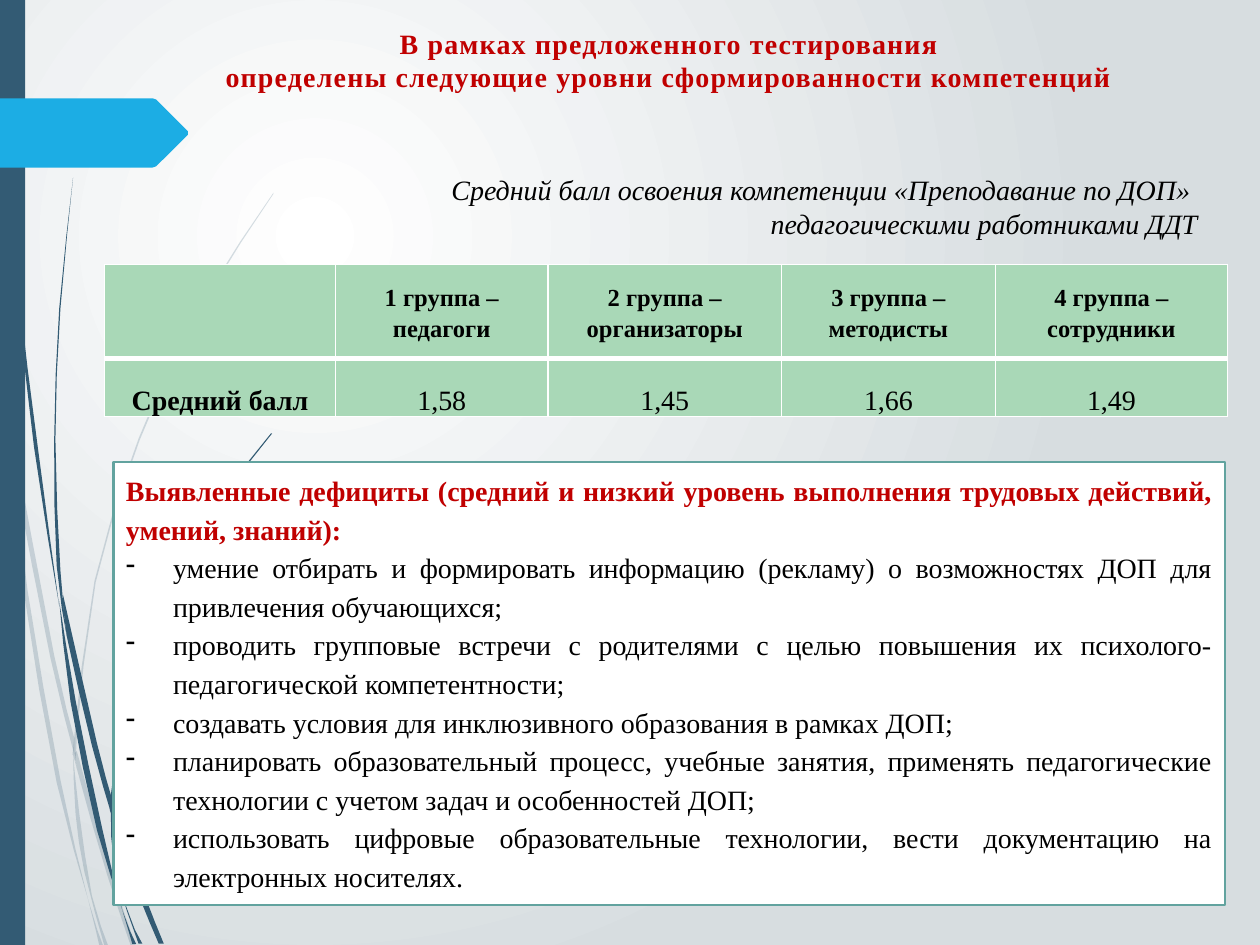
import dataclasses
import typing

import lxml.etree
import pptx
import pptx.dml.color
import pptx.enum.shapes
import pptx.enum.text
import pptx.oxml.ns
import pptx.util

Cm = pptx.util.Cm
Align = pptx.enum.text.PP_ALIGN
Anchor = pptx.enum.text.MSO_ANCHOR
qn = pptx.oxml.ns.qn


@dataclasses.dataclass(frozen=True)
class Theme:
    font: str = "Times New Roman"
    body_size: float = 16
    header_size: float = 14
    slate: str = "335B74"
    arrow: str = "1CADE4"
    heading: str = "C00000"
    text: str = "000000"
    cell: str = "A9D8B7"
    white: str = "FFFFFF"
    frame: str = "62A39F"
    background_edge: str = "D7DDE0"


THEME = Theme()
GRID_CM = 0.0254


class TextStyle(typing.NamedTuple):
    color: str = THEME.text
    size: float = THEME.body_size
    bold: bool = False
    italic: bool = False
    align: Align = Align.CENTER
    line_spacing: float = 1.15
    tracking: int = 0
    bullet: bool = False


class Wisp(typing.NamedTuple):
    first_edge: list
    second_edge: list
    alpha: int = 100000


PALE = 20000
WISPS = [
    Wisp([(0, 299), (8, 350)], [(0, 282), (8, 350)], PALE),
    Wisp([(10, 345), (12, 376), (40, 522), (59, 599)], [(10, 345), (43, 520), (59, 586)], PALE),
    Wisp([(61, 596), (61, 610), (85, 694), (104, 751)], [(61, 596), (88, 692), (108, 751)], PALE),
    Wisp([(8, 350), (19, 470), (45, 621), (70, 714), (79, 751)],
         [(8, 350), (22, 469), (48, 619), (70, 714), (82, 751)], PALE),
    Wisp([(58, 599), (60, 646), (67, 692), (83, 751)], [(58, 599), (63, 646), (73, 711), (86, 751)], PALE),
    Wisp([(58, 599), (59, 584), (75, 461), (110, 348), (158, 244), (217, 153)],
         [(61, 610), (61, 584), (76, 462), (111, 349), (159, 245), (217, 154)], PALE),
    Wisp([(2, 0), (5, 110), (14, 233), (27, 355), (47, 481)],
         [(3, 0), (6, 109), (15, 232), (30, 355), (47, 481)]),
    Wisp([(50, 472), (53, 505), (73, 592), (88, 645)], [(50, 472), (77, 590), (88, 631)]),
    Wisp([(91, 641), (91, 656), (109, 708), (126, 749)], [(91, 641), (113, 706), (130, 749)]),
    Wisp([(47, 477), (56, 557), (77, 659), (97, 722), (105, 749)],
         [(47, 477), (60, 556), (81, 657), (97, 722), (108, 749)]),
    Wisp([(53, 505), (45, 449), (43, 349), (47, 245), (58, 141)],
         [(53, 505), (48, 453), (44, 349), (48, 245), (58, 141)]),
    Wisp([(88, 645), (88, 631), (101, 551), (129, 474), (168, 405), (215, 344)],
         [(91, 656), (91, 633), (103, 552), (131, 476), (169, 406), (216, 344)]),
    Wisp([(88, 645), (91, 691), (110, 749)], [(88, 645), (91, 656), (100, 719), (113, 749)]),
]
ARROW = [(0, 78), (121, 78), (124, 79), (149, 104), (149, 107), (124, 132), (121, 133), (0, 133)]

TITLE = ["В рамках предложенного тестирования",
         "определены следующие уровни сформированности компетенций"]
SUBTITLE = ["Средний балл освоения компетенции «Преподавание по ДОП» ",
            "педагогическими работниками ДДТ"]
COLUMN_WIDTHS = [4.65, 4.29, 4.7, 4.32, 4.67]
SCORES = [["", "1 группа – педагоги", "2 группа – организаторы",
           "3 группа – методисты", "4 группа –сотрудники"],
          ["Средний балл", "1,58", "1,45", "1,66", "1,49"]]
DEFICITS = [
    "Выявленные дефициты (средний и низкий уровень выполнения трудовых действий, умений, знаний):",
    "умение отбирать и формировать информацию (рекламу) о возможностях ДОП для привлечения обучающихся;",
    "проводить групповые встречи с родителями с целью повышения их психолого-педагогической компетентности;",
    "создавать условия для инклюзивного образования в рамках ДОП;",
    "планировать образовательный процесс, учебные занятия, применять педагогические технологии "
    "с учетом задач и особенностей ДОП;",
    "использовать цифровые образовательные технологии, вести документацию на электронных носителях.",
]


def rgb(value: str) -> pptx.dml.color.RGBColor:
    return pptx.dml.color.RGBColor.from_string(value)


def paint(target, color: str) -> None:
    target.fill.solid()
    target.fill.fore_color.rgb = rgb(color)


def smooth(points: list) -> list:
    padded = [points[0], *points, points[-1]]
    curve = [points[0]]
    for a, b, c, d in zip(padded, padded[1:], padded[2:], padded[3:]):
        middle = tuple((9 * (q + r) - p - s) / 16 for p, q, r, s in zip(a, b, c, d))
        curve += [middle, c]
    return curve


def draw_outline(slide, points: list, color: str, alpha: int = 100000) -> None:
    corners = [(Cm(x * GRID_CM), Cm(y * GRID_CM)) for x, y in points]
    builder = slide.shapes.build_freeform(*corners[0])
    builder.add_line_segments(corners[1:], close=True)
    shape = builder.convert_to_shape()
    shape.shadow.inherit = False
    paint(shape, color)
    shape.line.fill.background()
    color_node = shape._element.spPr.find(qn("a:solidFill"))[0]
    lxml.etree.SubElement(color_node, qn("a:alpha"), val=str(alpha))


def draw_rectangle(slide, box: list, color: str, line_color: str):
    shape = slide.shapes.add_shape(pptx.enum.shapes.MSO_SHAPE.RECTANGLE, *map(Cm, box))
    shape.shadow.inherit = False
    paint(shape, color)
    shape.line.color.rgb = rgb(line_color)
    shape.line.width = pptx.util.Pt(1.25)
    return shape


def format_paragraph(paragraph, style: TextStyle) -> None:
    paragraph.alignment = style.align
    paragraph.line_spacing = style.line_spacing
    for run in paragraph.runs:
        run.font.name = THEME.font
        run.font.size = pptx.util.Pt(style.size)
        run.font.bold, run.font.italic = style.bold, style.italic
        run.font.color.rgb = rgb(style.color)
        run.font._element.set("spc", str(style.tracking))
    if style.bullet:
        properties = paragraph._p.get_or_add_pPr()
        properties.set("marL", str(Cm(0.95)))
        properties.set("indent", str(Cm(-0.95)))
        lxml.etree.SubElement(properties, qn("a:buChar"), char="-")


def write_lines(shape, lines: list, styles: list, anchor: Anchor) -> None:
    shape.text_frame.word_wrap = True
    shape.text_frame.vertical_anchor = anchor
    shape.text_frame.text = "\n".join(lines)
    for paragraph, style in zip(shape.text_frame.paragraphs, styles):
        format_paragraph(paragraph, style)


def draw_scores(slide, box: list) -> None:
    table = slide.shapes.add_table(len(SCORES), len(COLUMN_WIDTHS), *map(Cm, box)).table
    table.first_row = table.horz_banding = False
    for column, width in zip(table.columns, COLUMN_WIDTHS):
        column.width = Cm(width)
    for row, height, values in zip(table.rows, [1.9, 1.17], SCORES):
        row.height = Cm(height)
        header = values is SCORES[0]
        style = TextStyle(size=THEME.header_size if header else THEME.body_size)
        for index, (cell, value) in enumerate(zip(row.cells, values)):
            cell.margin_left = cell.margin_right = Cm(0.18)
            cell.margin_top = cell.margin_bottom = 0
            cell.vertical_anchor = Anchor.MIDDLE if header else Anchor.BOTTOM
            for side, points in zip("LRTB", [1, 1, 1, 3] if header else [1, 1, 3, 1]):
                line = lxml.etree.SubElement(cell._tc.get_or_add_tcPr(), qn(f"a:ln{side}"),
                                             w=str(pptx.util.Pt(points)))
                fill = lxml.etree.SubElement(line, qn("a:solidFill"))
                lxml.etree.SubElement(fill, qn("a:srgbClr"), val=THEME.white)
            paint(cell, THEME.cell)
            cell.text_frame.text = value
            format_paragraph(cell.text_frame.paragraphs[0], style._replace(bold=header or index == 0))


def draw_background(slide) -> None:
    fill = slide.background.fill
    fill.gradient()
    for stop, color in zip(fill.gradient_stops, [THEME.white, THEME.background_edge]):
        stop.color.rgb = rgb(color)
    gradient = slide._element.find(".//" + qn("a:gradFill"))
    gradient.remove(gradient.find(qn("a:lin")))
    shade = lxml.etree.SubElement(gradient, qn("a:path"), path="circle")
    lxml.etree.SubElement(shade, qn("a:fillToRect"), l="50000", t="50000", r="100000", b="100000")


def main() -> None:
    presentation = pptx.Presentation()
    presentation.slide_width, presentation.slide_height = Cm(25.4), Cm(19.05)
    slide = presentation.slides.add_slide(presentation.slide_layouts[6])
    draw_background(slide)
    for wisp in WISPS:
        outline = smooth(wisp.first_edge) + smooth(wisp.second_edge)[::-1]
        draw_outline(slide, outline, THEME.slate, wisp.alpha)
    draw_rectangle(slide, [0, 0, 0.51, 19.05], THEME.slate, THEME.slate).line.fill.background()
    draw_outline(slide, ARROW, THEME.arrow)
    title = slide.shapes.add_textbox(*map(Cm, [1.32, 0.53, 24.33, 1.37]))
    frame = title.text_frame
    frame.margin_left = frame.margin_right = frame.margin_top = frame.margin_bottom = 0
    title_style = TextStyle(THEME.heading, bold=True, line_spacing=1.0, tracking=70)
    write_lines(title, TITLE, [title_style] * 2, Anchor.TOP)
    subtitle = slide.shapes.add_textbox(*map(Cm, [3.1, 3.35, 21.29, 1.63]))
    subtitle_style = TextStyle(italic=True, align=Align.RIGHT, line_spacing=1.0)
    write_lines(subtitle, SUBTITLE, [subtitle_style] * 2, Anchor.MIDDLE)
    draw_scores(slide, [2.11, 5.33, 22.63, 3.07])
    panel = draw_rectangle(slide, [2.29, 9.32, 22.4, 8.92], THEME.white, THEME.frame)
    heading_style = TextStyle(THEME.heading, bold=True, align=Align.JUSTIFY)
    item_style = TextStyle(align=Align.JUSTIFY, bullet=True)
    write_lines(panel, DEFICITS, [heading_style] + [item_style] * 5, Anchor.TOP)
    presentation.save("out.pptx")


if __name__ == "__main__":
    main()
